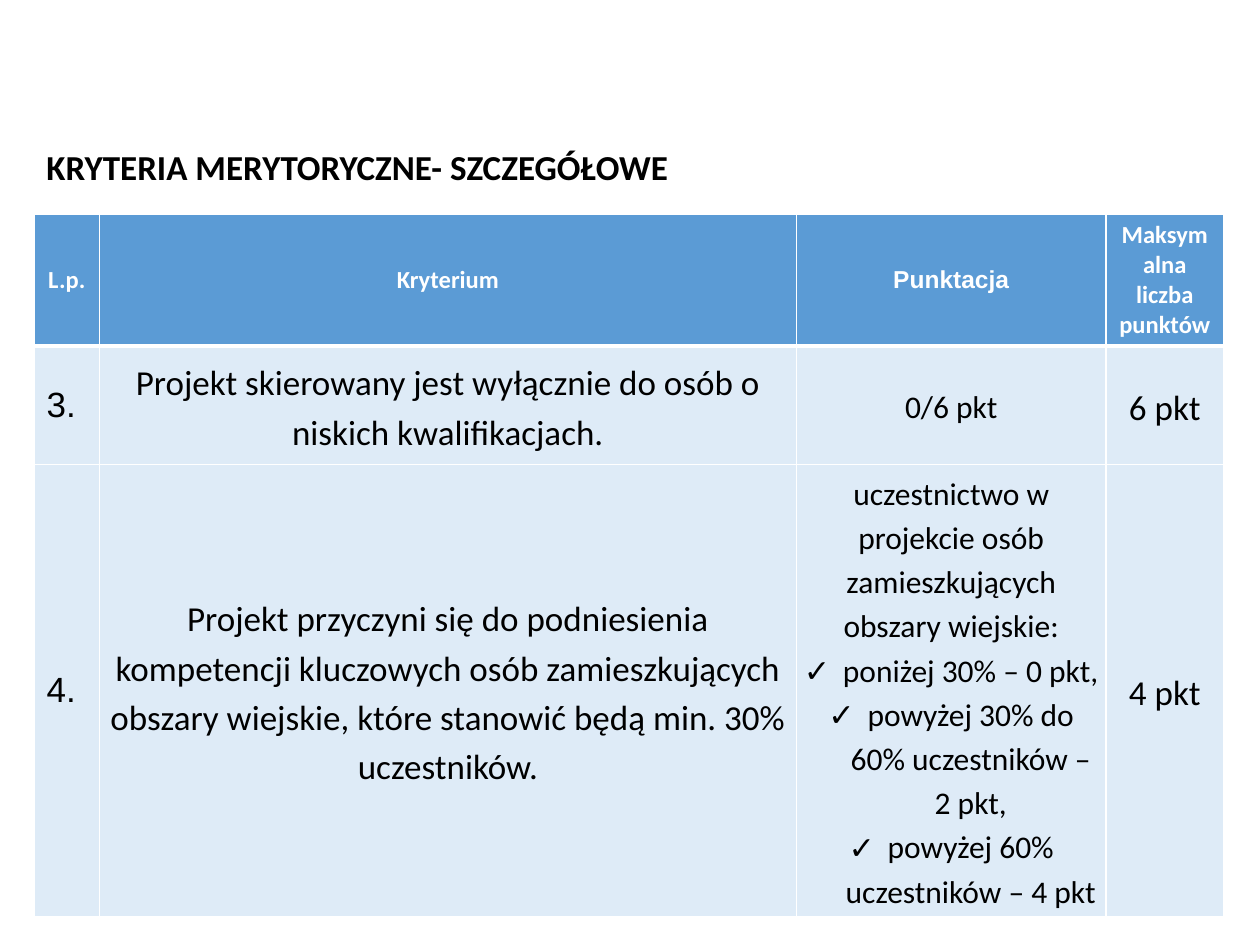
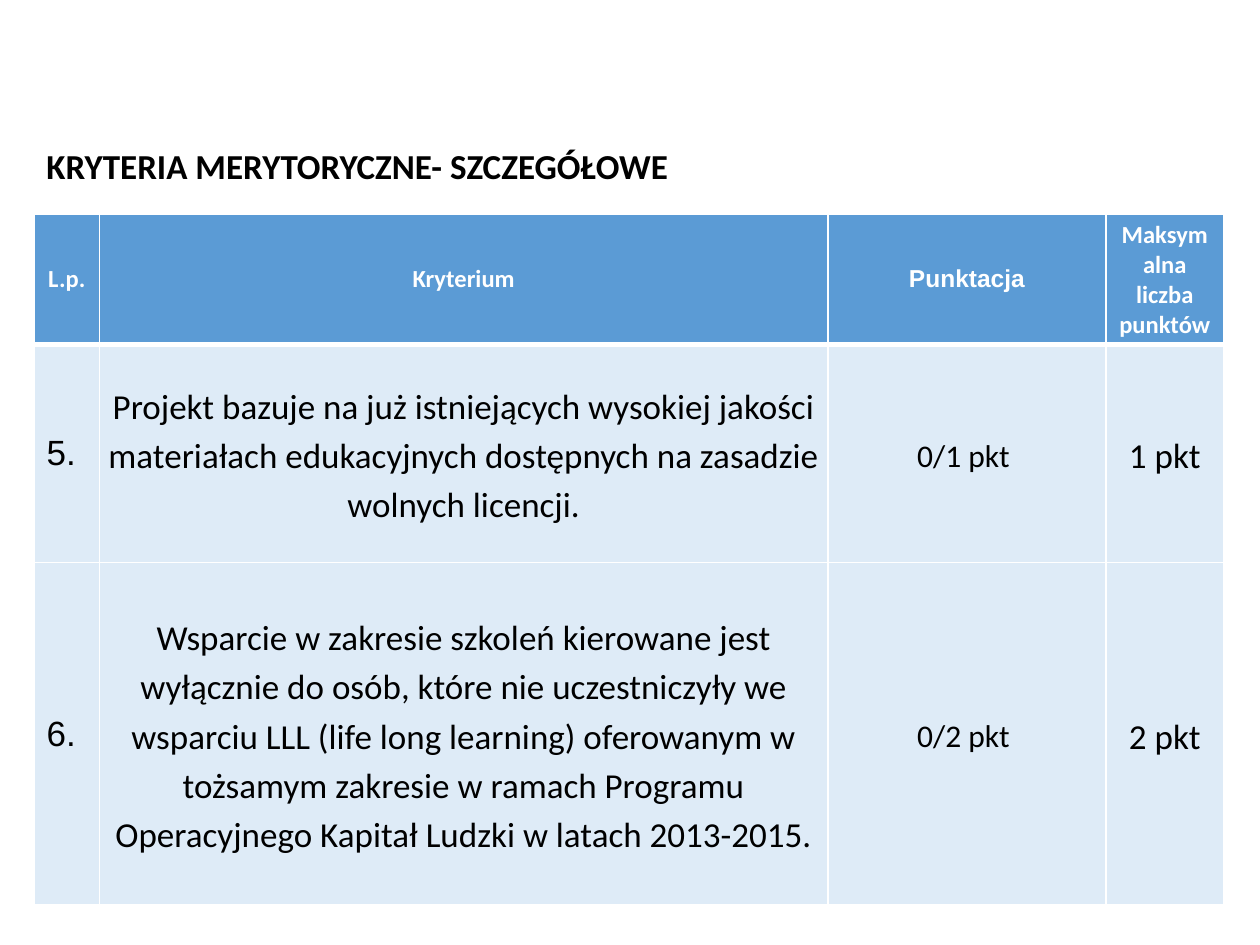
from lxml.etree import SubElement
from pptx import Presentation
from pptx.dml.color import RGBColor
from pptx.enum.text import MSO_ANCHOR, MSO_AUTO_SIZE, PP_ALIGN
from pptx.oxml.ns import qn
from pptx.util import Inches, Pt

WHITE = RGBColor(0xFF, 0xFF, 0xFF)
BLACK = RGBColor(0x00, 0x00, 0x00)
HEADER_BLUE = RGBColor(0x5B, 0x9B, 0xD5)
ROW_BLUE = RGBColor(0xDE, 0xEB, 0xF7)

SLIDE_W, SLIDE_H = Inches(10), Inches(7.5)
LEFT, TABLE_TOP, TABLE_W = 0.27, 1.7, 9.44
NUMBER_W, MAX_W = 0.52, 0.93
HEADER_H = 1.01
CELL_MARGIN = Inches(0.04)
BULLET_INDENT = Inches(0.31)

TITLE = "KRYTERIA MERYTORYCZNE- SZCZEGÓŁOWE"
HEADERS = ["L.p.", "Kryterium", "Punktacja", "Maksymalna liczba punktów"]
HEADER_FONTS = ["Calibri", "Calibri", "Arial", "Calibri"]
# Format of the body columns: number, criterion, scoring, maximum
BODY_FORMATS = [
    dict(font="Arial", size=20),
    dict(size=20, align=PP_ALIGN.CENTER, spacing=1.15),
    dict(size=18, align=PP_ALIGN.CENTER, spacing=1.15),
    dict(size=20, align=PP_ALIGN.CENTER, spacing=1.15),
]


def add_bullet(p):
    """Give the paragraph a check mark with a hanging indent."""
    pPr = p._p.get_or_add_pPr()
    pPr.set("marL", str(BULLET_INDENT))
    pPr.set("indent", str(-BULLET_INDENT))
    SubElement(pPr, qn("a:buFont")).set("typeface", "Arial")
    SubElement(pPr, qn("a:buChar")).set("char", "✓")


def write(tf, text, font="Calibri", size=20, color=BLACK, bold=False,
          align=PP_ALIGN.LEFT, spacing=None):
    """Write text into a frame; every line after the first is a bullet."""
    for i, line in enumerate(text.split("\n")):
        p = tf.add_paragraph() if i else tf.paragraphs[0]
        p.alignment = align
        if spacing:
            p.line_spacing = spacing
        if i:
            add_bullet(p)
        r = p.add_run()
        r.text = line
        r.font.name = font
        r.font.size = Pt(size)
        r.font.bold = bold
        r.font.color.rgb = color


def style_cell(cell, fill, top=1, bottom=1):
    """Draw white borders, then the fill, and centre the text vertically."""
    tcPr = cell._tc.get_or_add_tcPr()
    for side, width in (("L", 1), ("R", 1), ("T", top), ("B", bottom)):
        ln = SubElement(tcPr, qn(f"a:ln{side}"), w=str(Pt(width)))
        solid = SubElement(ln, qn("a:solidFill"))
        SubElement(solid, qn("a:srgbClr"), val=str(WHITE))
    cell.fill.solid()
    cell.fill.fore_color.rgb = fill
    cell.vertical_anchor = MSO_ANCHOR.MIDDLE


def add_title(slide, top):
    sp = slide.shapes.add_textbox(Inches(LEFT), Inches(top), Inches(5.18), Inches(0.44))
    tf = sp.text_frame
    tf.word_wrap = False
    tf.auto_size = MSO_AUTO_SIZE.SHAPE_TO_FIT_TEXT
    tf.vertical_anchor = MSO_ANCHOR.MIDDLE
    write(tf, TITLE, bold=True)


def add_criteria_table(slide, rows, scoring_w, row_heights):
    heights = [HEADER_H, *row_heights]
    widths = [NUMBER_W, TABLE_W - NUMBER_W - scoring_w - MAX_W, scoring_w, MAX_W]
    table = slide.shapes.add_table(
        len(heights), len(widths), Inches(LEFT), Inches(TABLE_TOP),
        Inches(TABLE_W), Inches(sum(heights))).table
    table.horz_banding = False
    for column, width in zip(table.columns, widths):
        column.width = Inches(width)
    for row, height in zip(table.rows, heights):
        row.height = Inches(height)

    # Header row
    for c, (text, font) in enumerate(zip(HEADERS, HEADER_FONTS)):
        cell = table.cell(0, c)
        style_cell(cell, HEADER_BLUE, bottom=3)
        write(cell.text_frame, text, font=font, size=14, color=WHITE,
              bold=True, align=PP_ALIGN.CENTER)

    # Criteria rows
    for r, texts in enumerate(rows, start=1):
        for c, (text, fmt) in enumerate(zip(texts, BODY_FORMATS)):
            cell = table.cell(r, c)
            style_cell(cell, ROW_BLUE, top=3 if r == 1 else 1)
            if c:
                cell.margin_left = cell.margin_right = CELL_MARGIN
                cell.margin_top = cell.margin_bottom = CELL_MARGIN
            write(cell.text_frame, text, **fmt)


def add_criteria_slide(prs, title_top, rows, scoring_w, row_heights):
    slide = prs.slides.add_slide(prs.slide_layouts[6])
    add_criteria_table(slide, rows, scoring_w, row_heights)
    add_title(slide, title_top)


def main():
    prs = Presentation()
    prs.slide_width, prs.slide_height = SLIDE_W, SLIDE_H

    # Criteria 3 and 4
    add_criteria_slide(prs, 1.1, [
        ["3.", "Projekt skierowany jest wyłącznie do osób o niskich kwalifikacjach.",
         "0/6 pkt", "6 pkt"],
        ["4.", "Projekt przyczyni się do podniesienia kompetencji kluczowych osób "
               "zamieszkujących obszary wiejskie, które stanowić będą min. 30% "
               "uczestników.",
         "uczestnictwo w projekcie osób zamieszkujących obszary wiejskie:\n"
         "poniżej 30% – 0 pkt,\n"
         "powyżej 30% do 60% uczestników – 2 pkt,\n"
         "powyżej 60% uczestników – 4 pkt",
         "4 pkt"],
    ], scoring_w=2.46, row_heights=[0.94, 3.43])

    # Criteria 5 and 6
    add_criteria_slide(prs, 1.09, [
        ["5.", "Projekt bazuje na już istniejących wysokiej jakości materiałach "
               "edukacyjnych dostępnych na zasadzie wolnych licencji.",
         "0/1 pkt ", "1 pkt"],
        ["6.", "Wsparcie w zakresie szkoleń kierowane jest wyłącznie do osób, które "
               "nie uczestniczyły we wsparciu LLL (life long learning) oferowanym w "
               "tożsamym zakresie w ramach Programu Operacyjnego Kapitał Ludzki w "
               "latach 2013-2015.",
         "0/2 pkt ", "2 pkt"],
    ], scoring_w=2.21, row_heights=[1.73, 2.72])

    prs.save("out.pptx")


if __name__ == "__main__":
    main()
